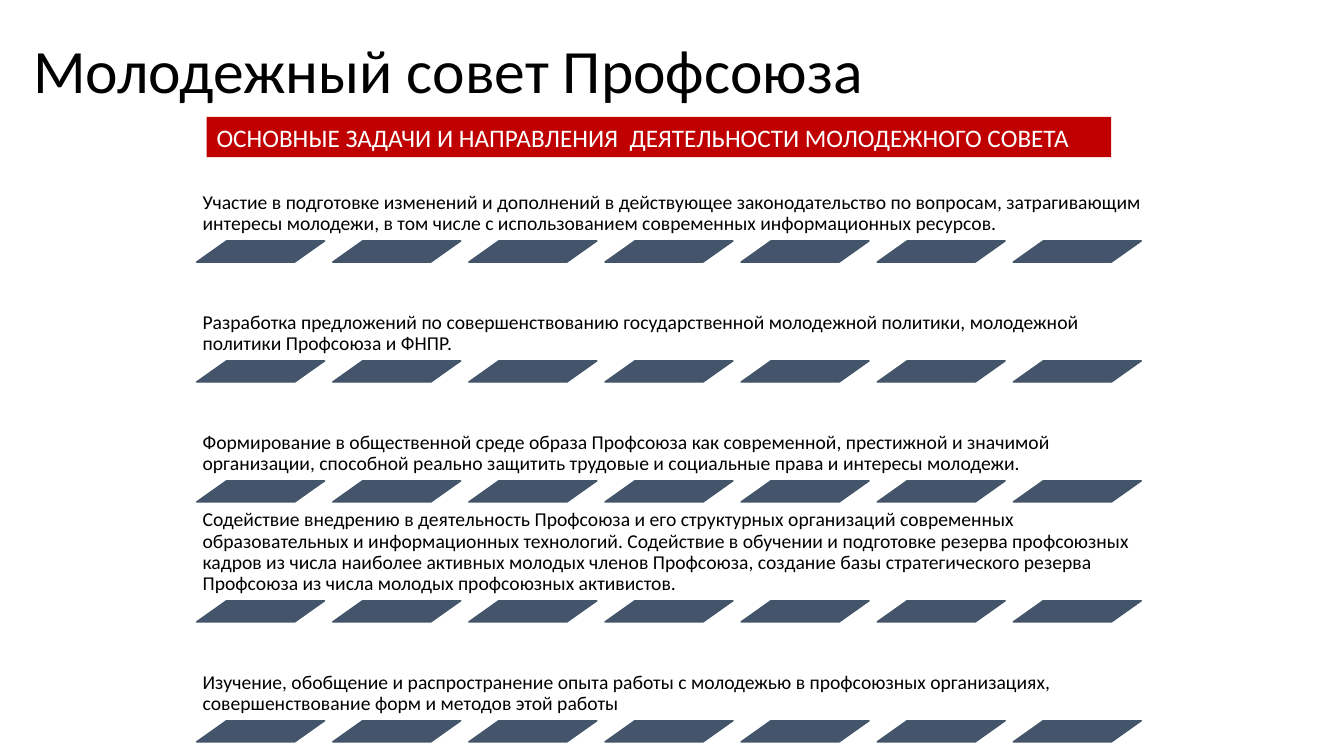
from pptx import Presentation
from pptx.dml.color import RGBColor
from pptx.enum.shapes import MSO_SHAPE
from pptx.enum.text import MSO_ANCHOR, MSO_AUTO_SIZE, PP_ALIGN
from pptx.util import Inches, Pt

RECTANGLE = MSO_SHAPE.RECTANGLE
PARALLELOGRAM = MSO_SHAPE.PARALLELOGRAM
TOP, MIDDLE, BOTTOM = MSO_ANCHOR.TOP, MSO_ANCHOR.MIDDLE, MSO_ANCHOR.BOTTOM
NO_FIT, GROW = MSO_AUTO_SIZE.NONE, MSO_AUTO_SIZE.SHAPE_TO_FIT_TEXT
LEFT = PP_ALIGN.LEFT

BLACK, WHITE, RED, SLATE = "000000", "FFFFFF", "C00000", "44546A"
TITLE = "Молодежный совет Профсоюза"
HEADING = "ОСНОВНЫЕ ЗАДАЧИ И НАПРАВЛЕНИЯ  ДЕЯТЕЛЬНОСТИ МОЛОДЕЖНОГО СОВЕТА"
TASKS = [
    "Участие в подготовке изменений и дополнений в действующее законодательство "
    "по вопросам, затрагивающим интересы молодежи, в том числе с использованием "
    "современных информационных ресурсов.",
    "Разработка предложений по совершенствованию государственной молодежной "
    "политики, молодежной политики Профсоюза и ФНПР.",
    "Формирование в общественной среде образа Профсоюза как современной, "
    "престижной и значимой организации, способной реально защитить трудовые и "
    "социальные права и интересы молодежи.",
    "Содействие внедрению в деятельность Профсоюза и его структурных организаций "
    "современных образовательных и информационных технологий. Содействие в обучении "
    "и подготовке резерва профсоюзных кадров из числа наиболее активных молодых "
    "членов Профсоюза, создание базы стратегического резерва Профсоюза из числа "
    "молодых профсоюзных активистов.",
    "Изучение, обобщение и распространение опыта работы с молодежью в профсоюзных "
    "организациях, совершенствование форм и методов этой работы",
]
TASK_PITCH = 1.19
DASH_COUNT = 7
DASH_PITCH = 1.35


def color(hex_value):
    return RGBColor.from_string(hex_value)


def inches(box):
    return [Inches(length) for length in box]


def write(frame, text, size, ink, anchor, spacing=1.0):
    frame.word_wrap = True
    frame.auto_size = NO_FIT
    frame.vertical_anchor = anchor
    paragraph = frame.paragraphs[0]
    paragraph.alignment = LEFT
    paragraph.line_spacing = spacing
    run = paragraph.add_run()
    run.text = text
    run.font.name = "Calibri"
    run.font.size = Pt(size)
    run.font.color.rgb = color(ink)


def add_filled(slide, preset, box, fill):
    shape = slide.shapes.add_shape(preset, *inches(box))
    shape.shadow.inherit = False
    shape.fill.solid()
    shape.fill.fore_color.rgb = color(fill)
    return shape


def place_title(slide, box):
    title = slide.shapes.title
    title.left, title.top, title.width, title.height = inches(box)
    write(title.text_frame, TITLE, 44, BLACK, MIDDLE, 0.9)


def add_heading(slide, box):
    banner = add_filled(slide, RECTANGLE, box, RED)
    banner.line.fill.background()
    write(banner.text_frame, HEADING, 18, WHITE, TOP)
    banner.text_frame.auto_size = GROW


def add_dashes(slide, left, top):
    for column in range(DASH_COUNT):
        box = (left + column * DASH_PITCH, top, 1.27, 0.21)
        dash = add_filled(slide, PARALLELOGRAM, box, SLATE)
        dash.adjustments[0] = 1.41
        dash.line.color.rgb = color(SLATE)
        dash.line.width = Pt(1)


def add_task(slide, task, box):
    left, top, width, height = box
    frame = slide.shapes.add_textbox(*inches(box)).text_frame
    frame.margin_left = frame.margin_right = Inches(0.06)
    frame.margin_top = frame.margin_bottom = Inches(0.06)
    write(frame, task, 14, BLACK, BOTTOM, 0.9)
    add_dashes(slide, left, top + height)


def add_tasks(slide, left, top, width):
    for row, task in enumerate(TASKS):
        add_task(slide, task, (left, top + row * TASK_PITCH, width, 0.87))


def main():
    presentation = Presentation()
    presentation.slide_width = Inches(13.33)
    presentation.slide_height = Inches(7.5)
    slide = presentation.slides.add_slide(presentation.slide_layouts[5])
    add_tasks(slide, 1.95, 1.52, 9.56)
    place_title(slide, (0.23, 0, 11.5, 1.45))
    add_heading(slide, (2.05, 1.16, 8.97, 0.4))
    presentation.save("out.pptx")


if __name__ == "__main__":
    main()
